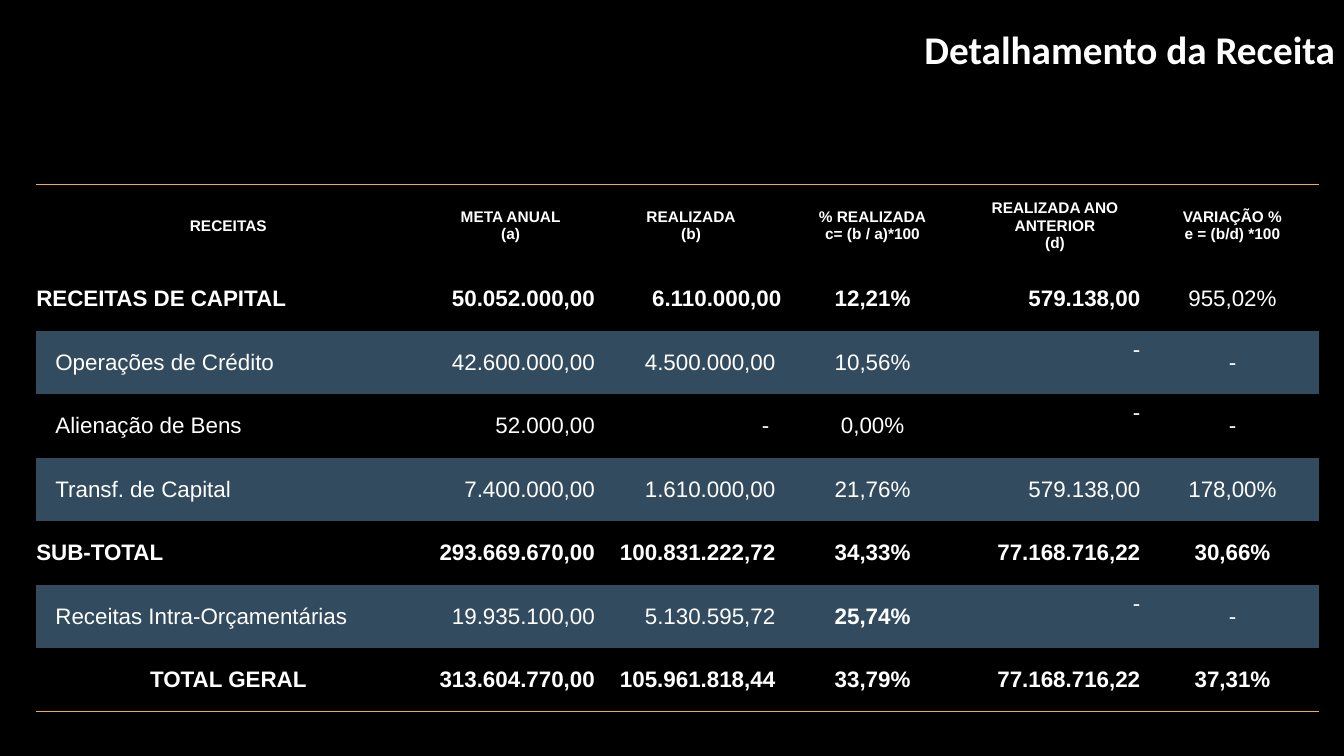
from lxml.etree import SubElement
from pptx import Presentation
from pptx.dml.color import RGBColor
from pptx.enum.text import MSO_ANCHOR as Anchor, PP_ALIGN as Align
from pptx.oxml.ns import qn
from pptx.util import Inches, Pt

COLORS = {"background": "000000", "text": "FFFFFF", "band": "324B5F", "rule": "FCB11C"}
TITLE = "Detalhamento da Receita"
HEADERS = [
    ["RECEITAS"],
    ["META ANUAL", "(a)"],
    ["REALIZADA", "(b)"],
    ["% REALIZADA", "c= (b / a)*100"],
    ["REALIZADA ANO ANTERIOR", "(d)"],
    ["VARIAÇÃO %", "e = (b/d) *100"],
]
REVENUES = [
    ["RECEITAS DE CAPITAL", "50.052.000,00", "6.110.000,00", "12,21%", "579.138,00", "955,02%"],
    ["Operações de Crédito", "42.600.000,00", "4.500.000,00", "10,56%", "-", "-"],
    ["Alienação de Bens", "52.000,00", "-", "0,00%", "-", "-"],
    ["Transf. de Capital", "7.400.000,00", "1.610.000,00", "21,76%", "579.138,00", "178,00%"],
    ["SUB-TOTAL", "293.669.670,00", "100.831.222,72", "34,33%", "77.168.716,22", "30,66%"],
    ["Receitas Intra-Orçamentárias", "19.935.100,00", "5.130.595,72", "25,74%", "-", "-"],
    ["TOTAL GERAL", "313.604.770,00", "105.961.818,44", "33,79%", "77.168.716,22", "37,31%"],
]
ROWS = [HEADERS] + [[[value] for value in revenue] for revenue in REVENUES]
LAST_ROW = len(ROWS) - 1
COLUMN_WIDTHS = [3.81, 1.79, 1.79, 1.81, 1.81, 1.71]
ROW_HEIGHTS = [0.82] + [0.63] * len(REVENUES)
COLUMN_ALIGNS = [Align.LEFT, Align.RIGHT, Align.RIGHT, Align.CENTER, Align.RIGHT, Align.CENTER]
BOLD_ROWS = {0, 1, 5, LAST_ROW}
BOLD_EXCEPTIONS = {(1, 5): False, (6, 3): True}
BAND_ROWS = {2, 4, 6}
INDENTED_ROWS = {2, 3, 4, 6}
RIGHT_MARGINS = {(1, 2): 0, (3, 2): 0.12}
NO_STYLE = "{2D5ABB26-0587-4C30-8999-92F81FD0307C}"


def set_font(font, name, size, bold):
    for attribute, value in {"name": name, "size": Pt(size), "bold": bold}.items():
        setattr(font, attribute, value)
    font.color.rgb = RGBColor.from_string(COLORS["text"])


def set_margins(target, left=0, top=0, right=0, bottom=0):
    margins = {"left": left, "top": top, "right": right, "bottom": bottom}
    for side, length in margins.items():
        setattr(target, f"margin_{side}", Inches(length))


def add_rule(cell, tag):
    properties = cell._tc.get_or_add_tcPr()
    line = SubElement(properties, qn(tag), w=str(Pt(1)))
    fill = SubElement(line, qn("a:solidFill"))
    SubElement(fill, qn("a:srgbClr"), val=COLORS["rule"])


def add_title(slide):
    title = slide.shapes.title
    box = {"left": 4.91, "top": 0.2, "width": 8.43, "height": 0.57}
    for attribute, length in box.items():
        setattr(title, attribute, Inches(length))
    frame = title.text_frame
    frame.word_wrap = True
    frame.vertical_anchor = Anchor.TOP
    set_margins(frame, 0.1, 0.05, 0.1, 0.05)
    frame.text = TITLE
    paragraph = frame.paragraphs[0]
    paragraph.alignment = Align.RIGHT
    set_font(paragraph.runs[0].font, "Calibri", 28, True)


def cell_margins(row, column, lines):
    if column == 0:
        return {"left": 0.19 if row in INDENTED_ROWS else 0}
    if row == 0 or COLUMN_ALIGNS[column] != Align.RIGHT:
        return {}
    raised = column == 4 and lines == ["-"]
    return {"right": RIGHT_MARGINS.get((row, column), 0.06), "bottom": 0.25 if raised else 0}


def format_cell(cell, row, column, lines):
    centered = row == 0 or (row, column) == (LAST_ROW, 0)
    bold = BOLD_EXCEPTIONS.get((row, column), row in BOLD_ROWS)
    cell.text = "\n".join(lines)
    cell.vertical_anchor = Anchor.MIDDLE
    set_margins(cell, **cell_margins(row, column, lines))
    for paragraph in cell.text_frame.paragraphs:
        paragraph.alignment = Align.CENTER if centered else COLUMN_ALIGNS[column]
        set_font(paragraph.runs[0].font, "Arial", 11 if row == 0 else 16, bold)
    if row == 0:
        add_rule(cell, "a:lnT")
    if row == LAST_ROW:
        add_rule(cell, "a:lnB")
    if row in BAND_ROWS:
        cell.fill.solid()
        cell.fill.fore_color.rgb = RGBColor.from_string(COLORS["band"])
    else:
        cell.fill.background()


def add_revenue_table(slide):
    frame = slide.shapes.add_table(
        len(ROWS), len(COLUMN_WIDTHS), Inches(0.36), Inches(1.83),
        Inches(sum(COLUMN_WIDTHS)), Inches(sum(ROW_HEIGHTS)))
    table = frame.table
    table.first_row = False
    table.horz_banding = False
    table._tbl.tblPr.find(qn("a:tableStyleId")).text = NO_STYLE
    for column, width in zip(table.columns, COLUMN_WIDTHS):
        column.width = Inches(width)
    for row, height in zip(table.rows, ROW_HEIGHTS):
        row.height = Inches(height)
    for row, entries in enumerate(ROWS):
        for column, lines in enumerate(entries):
            format_cell(table.cell(row, column), row, column, lines)


def main():
    presentation = Presentation()
    presentation.slide_width = Inches(13.33)
    presentation.slide_height = Inches(7.5)
    slide = presentation.slides.add_slide(presentation.slide_layouts[5])
    slide.background.fill.solid()
    slide.background.fill.fore_color.rgb = RGBColor.from_string(COLORS["background"])
    add_title(slide)
    add_revenue_table(slide)
    presentation.save("out.pptx")


if __name__ == "__main__":
    main()
